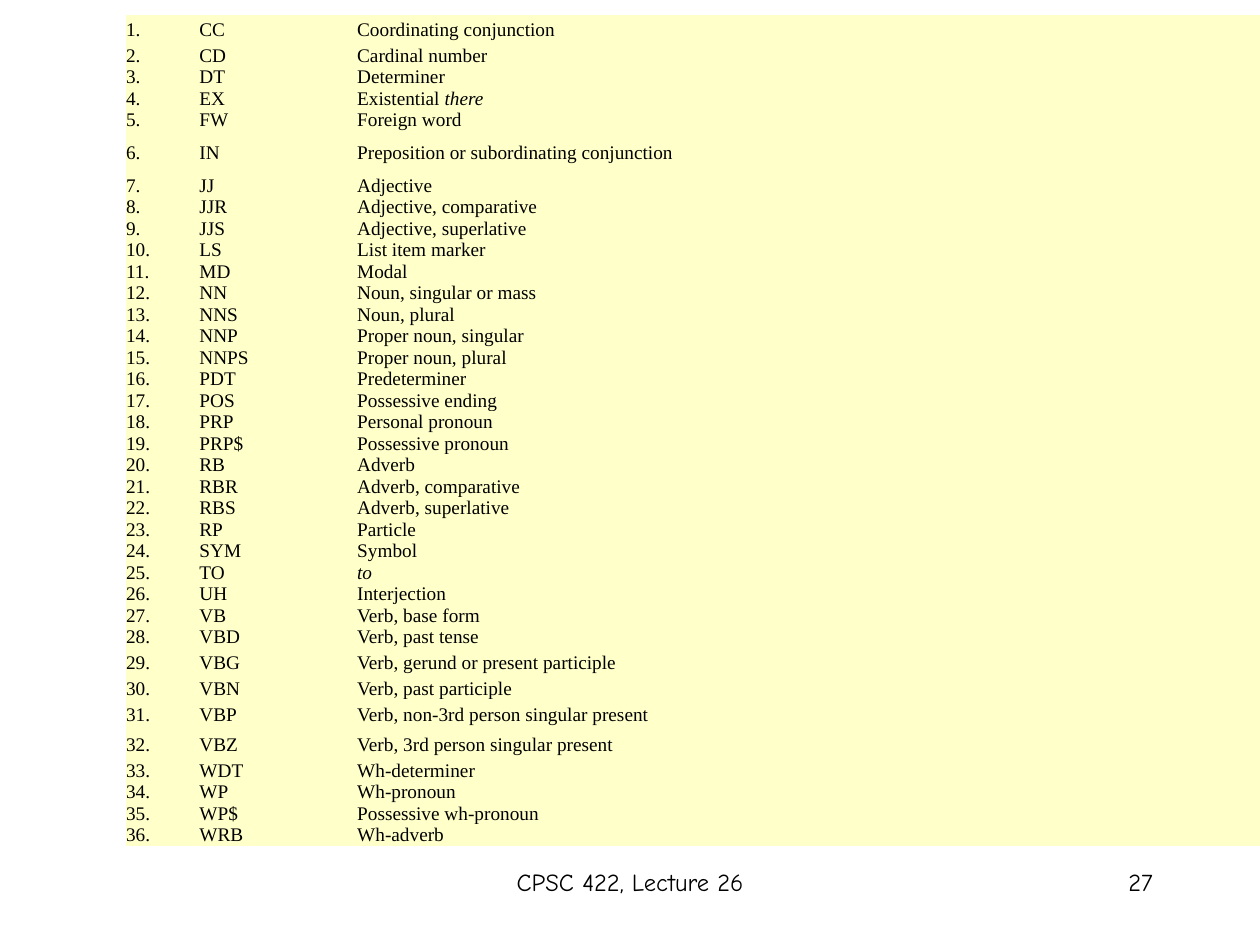
from dataclasses import dataclass

from pptx import Presentation
from pptx.dml.color import RGBColor as RGB
from pptx.enum.text import MSO_ANCHOR as Anchor, PP_ALIGN as Align
from pptx.util import Cm, Pt


@dataclass(frozen=True)
class Theme:
    ink: RGB = RGB(0, 0, 0)
    fill: RGB = RGB(0xFF, 0xFF, 0xCA)
    serif: str = "Times New Roman"
    hand: str = "Comic Neue"
    small: int = 11
    foot: int = 14


THEME = Theme()
PLAIN = "{2D5ABB26-0587-4C30-8999-92F81FD0307C}"  # no style, no grid
COLS = (1.48, 3.18, 18.84)
ROW = 0.43
TALL = {1: 0.61, 6: 0.89, 29: 0.61, 31: 0.61, 32: 0.61}

# Asterisks mark italic words.
TAGS = (
    ("CC", "Coordinating conjunction"),
    ("CD", "Cardinal number"),
    ("DT", "Determiner"),
    ("EX", "Existential *there*"),
    ("FW", "Foreign word"),
    ("IN", "Preposition or subordinating conjunction"),
    ("JJ", "Adjective"),
    ("JJR", "Adjective, comparative"),
    ("JJS", "Adjective, superlative"),
    ("LS", "List item marker"),
    ("MD", "Modal"),
    ("NN", "Noun, singular or mass"),
    ("NNS", "Noun, plural"),
    ("NNP", "Proper noun, singular"),
    ("NNPS", "Proper noun, plural"),
    ("PDT", "Predeterminer"),
    ("POS", "Possessive ending"),
    ("PRP", "Personal pronoun"),
    ("PRP$", "Possessive pronoun"),
    ("RB", "Adverb"),
    ("RBR", "Adverb, comparative"),
    ("RBS", "Adverb, superlative"),
    ("RP", "Particle"),
    ("SYM", "Symbol"),
    ("TO", "*to*"),
    ("UH", "Interjection"),
    ("VB", "Verb, base form"),
    ("VBD", "Verb, past tense"),
    ("VBG", "Verb, gerund or present participle"),
    ("VBN", "Verb, past participle"),
    ("VBP", "Verb, non-3rd person singular present"),
    ("VBZ", "Verb, 3rd person singular present"),
    ("WDT", "Wh-determiner"),
    ("WP", "Wh-pronoun"),
    ("WP$", "Possessive wh-pronoun"),
    ("WRB", "Wh-adverb"),
)


def write(frame, text, face=THEME.serif, size=THEME.small, align=Align.LEFT):
    """Fill the first paragraph, with text between asterisks in italics."""
    para = frame.paragraphs[0]
    para.alignment = align
    for i, part in enumerate(text.split("*")):
        if part:
            run = para.add_run()
            run.text = part
            font = run.font
            font.name, font.size, font.italic = face, Pt(size), i % 2 == 1
            font.color.rgb = THEME.ink


def tag_table(slide, left, top, width, height):
    frame = slide.shapes.add_table(
        len(TAGS), len(COLS), Cm(left), Cm(top), Cm(width), Cm(height))
    table = frame.table
    table.first_row = table.horz_banding = False
    table._tbl.tblPr.find("{*}tableStyleId").text = PLAIN
    for col, wide in zip(table.columns, COLS):
        col.width = Cm(wide)
    for num, (row, tag) in enumerate(zip(table.rows, TAGS), 1):
        row.height = Cm(TALL.get(num, ROW))
        for cell, text in zip(row.cells, (f"{num}.", *tag)):
            cell.margin_left = cell.margin_right = 0
            cell.margin_top = cell.margin_bottom = 0
            cell.vertical_anchor = Anchor.MIDDLE
            cell.fill.solid()
            cell.fill.fore_color.rgb = THEME.fill
            write(cell.text_frame, text)
    frame.height = Cm(height)


def footer(slide, left, top, width, height):
    parts = (("CPSC 422, Lecture 26", 0, 8.05, Align.CENTER),
             ("27", width - 5.28, 5.28, Align.RIGHT))
    for text, shift, wide, align in parts:
        box = slide.shapes.add_textbox(
            Cm(left + shift), Cm(top), Cm(wide), Cm(height))
        box.text_frame.word_wrap = True
        write(box.text_frame, text, face=THEME.hand, size=THEME.foot, align=align)


def main():
    deck = Presentation()
    deck.slide_width, deck.slide_height = Cm(25.4), Cm(19.05)
    slide = deck.slides.add_slide(deck.slide_layouts[6])
    tag_table(slide, 2.54, 0.3, sum(COLS), 18.31)
    footer(slide, 8.68, 17.36, 14.81, 1.27)
    deck.save("out.pptx")


if __name__ == "__main__":
    main()
